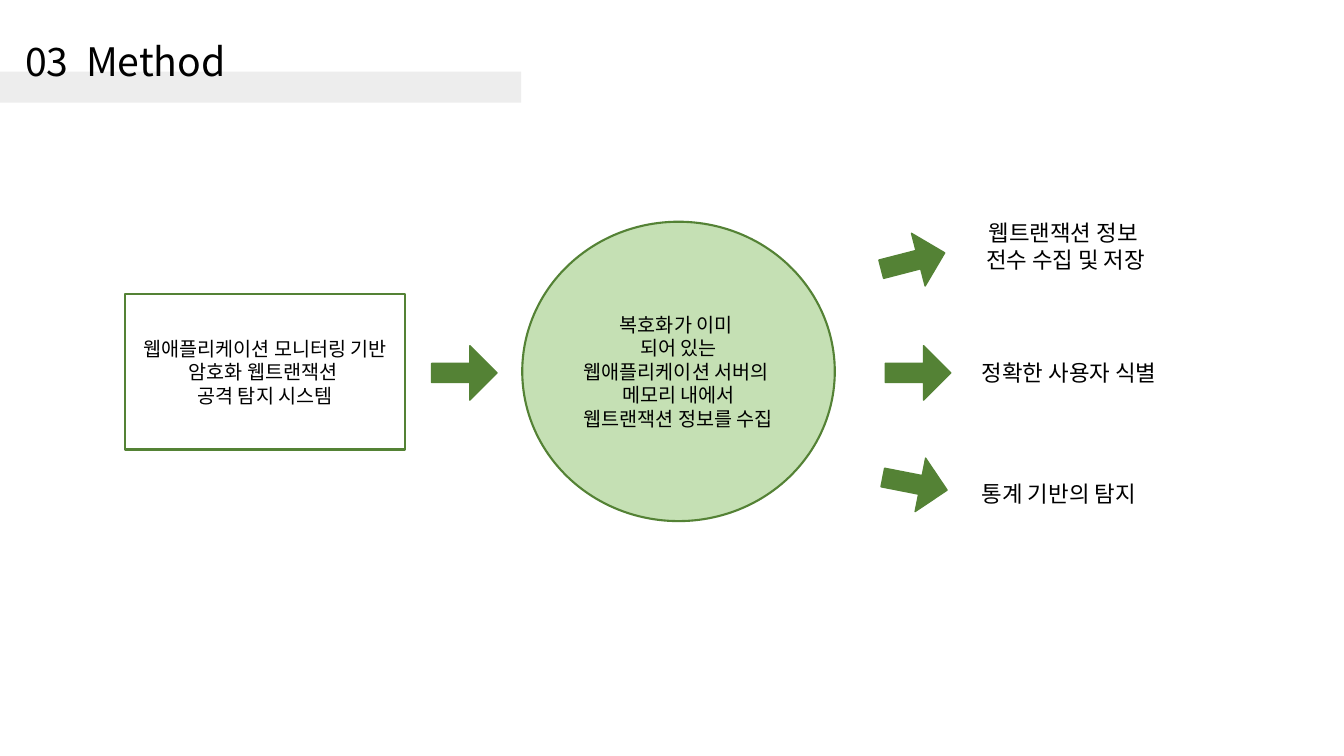
from lxml import etree
from pptx import Presentation
from pptx.dml.color import RGBColor
from pptx.enum import shapes, text
from pptx.oxml.ns import qn
from pptx.util import Inches, Pt

FONT = "Noto Sans CJK KR"
GREEN = "548235"
LEFT, CENTER = text.PP_ALIGN.LEFT, text.PP_ALIGN.CENTER


def color(value):
    """Return the colour for a hex string."""
    return RGBColor.from_string(value)


def write(sp, lines, size, align=CENTER, **frame):
    """Write one paragraph per line into a shape."""
    tf = sp.text_frame
    settings = {"word_wrap": True, "vertical_anchor": text.MSO_ANCHOR.MIDDLE}
    for name, value in {**settings, **frame}.items():
        setattr(tf, name, value)
    for i, line in enumerate(lines):
        p = tf.add_paragraph() if i else tf.paragraphs[0]
        p.alignment = align
        r = p.add_run()
        r.text = line
        for name, value in {"name": FONT, "size": Pt(size)}.items():
            setattr(r.font, name, value)
        r.font.color.rgb = color("000000")
        ea = etree.SubElement(r.font._element, qn("a:ea"))
        ea.set("typeface", FONT)


def add_shape(s, kind, box, fill, line=None, width=1.5):
    """Add a flat preset shape with an optional outline."""
    sp = s.shapes.add_shape(kind, *map(Inches, box))
    sp.shadow.inherit = False
    sp.fill.solid()
    sp.fill.fore_color.rgb = color(fill)
    if line:
        sp.line.color.rgb = color(line)
        sp.line.width = Pt(width)
    else:
        sp.line.fill.background()
    return sp


def add_arrow(s, left, top, rotation=0):
    """Add a green block arrow."""
    sp = add_shape(s, shapes.MSO_SHAPE.RIGHT_ARROW, (left, top, 0.65, 0.54), GREEN, GREEN, 1)
    sp.adjustments[0] = 0.348
    sp.rotation = rotation


def add_label(s, box, lines, align=LEFT):
    """Add a result label that does not wrap."""
    sp = s.shapes.add_textbox(*map(Inches, box))
    write(sp, lines, 16, align, word_wrap=False, vertical_anchor=text.MSO_ANCHOR.TOP,
          auto_size=text.MSO_AUTO_SIZE.SHAPE_TO_FIT_TEXT)


def add_title(s, title):
    """Add the title over its grey bar."""
    add_shape(s, shapes.MSO_SHAPE.RECTANGLE, (0, 0.71, 5.17, 0.31), "EDEDED")
    sp = s.shapes.add_textbox(*map(Inches, (0.15, 0.15, 4.84, 0.97)))
    write(sp, [title], 28, LEFT)
    sp.text_frame.paragraphs[0].line_spacing = 0.9


def main():
    """Build the slide and save it."""
    prs = Presentation()
    prs.slide_width, prs.slide_height = Inches(13.33), Inches(7.5)
    s = prs.slides.add_slide(prs.slide_layouts[6])
    add_title(s, "03  Method")

    system = add_shape(s, shapes.MSO_SHAPE.RECTANGLE, (1.24, 2.92, 2.78, 1.54), "FFFFFF", GREEN)
    write(system, ["웹애플리케이션 모니터링 기반 암호화 웹트랜잭션 ", "공격 탐지 시스템"], 14)
    collection = add_shape(s, shapes.MSO_SHAPE.OVAL, (5.18, 2.2, 3.1, 2.97), "C5E0B4", GREEN)
    write(collection, ["복호화가 이미 ", "되어 있는 웹애플리케이션 서버의 ",
                       "메모리 내에서 웹트랜잭션 정보를 수집"], 14)

    for arrow in [(4.28, 3.43), (8.73, 2.32, 345.5), (8.78, 3.43), (8.75, 4.53, 11.1)]:
        add_arrow(s, *arrow)

    add_label(s, (9.64, 2.13, 1.86, 0.64), ["웹트랜잭션 정보 ", "전수 수집 및 저장"], CENTER)
    add_label(s, (9.64, 3.51, 2.01, 0.37), ["정확한 사용자 식별"])
    add_label(s, (9.64, 4.71, 1.86, 0.37), ["통계 기반의 탐지"])
    prs.save("out.pptx")


if __name__ == "__main__":
    main()
